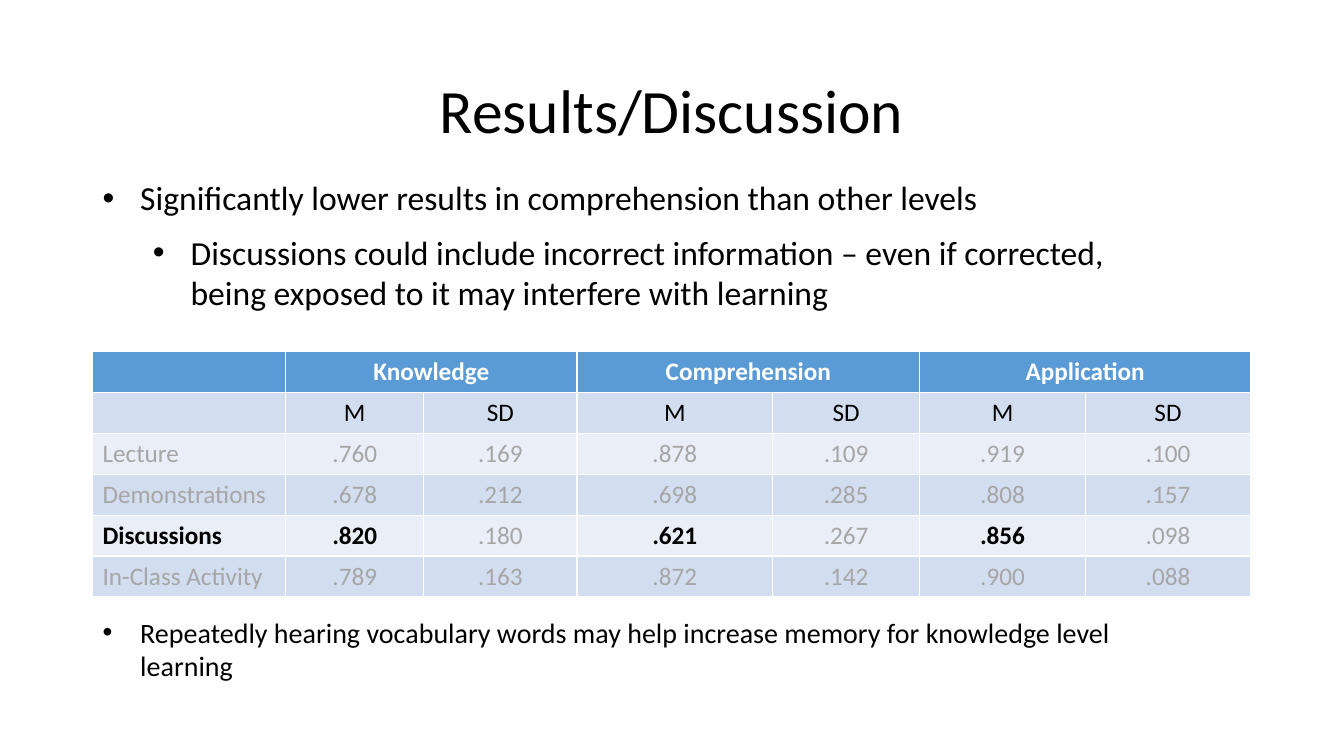
from dataclasses import dataclass

from lxml.etree import SubElement
from pptx import Presentation
from pptx.dml.color import RGBColor as Rgb
from pptx.enum.text import MSO_ANCHOR as Anchor
from pptx.enum.text import MSO_AUTO_SIZE as Auto
from pptx.enum.text import PP_ALIGN as Align
from pptx.oxml.ns import qn
from pptx.util import Cm, Pt


@dataclass(frozen=True)
class Theme:
    font: str = "Calibri"
    ink: str = "000000"
    dim: str = "A6A6A6"
    white: str = "FFFFFF"
    head: str = "5B9BD5"
    bands: tuple = ("EAEFF7", "D2DEEF")
    title: int = 44
    list: int = 24
    note: int = 20
    cell: int = 18


THEME = Theme()
LEFT = 2.33
WIDTHS = (4.87, 3.48, 3.86, 4.93, 3.71, 4.17, 4.17)
HIGH = 1.03
GROUPS = ("Knowledge", "Comprehension", "Application")
ROWS = (
    ("", "M", "SD", "M", "SD", "M", "SD"),
    ("Lecture", ".760", ".169", ".878", ".109", ".919", ".100"),
    ("Demonstrations", ".678", ".212", ".698", ".285", ".808", ".157"),
    ("Discussions", ".820", ".180", ".621", ".267", ".856", ".098"),
    ("In-Class Activity", ".789", ".163", ".872", ".142", ".900", ".088"),
)
STRONG = "Discussions"
MEANS = (1, 3, 5)
POINTS = (
    ("Significantly lower results in comprehension than other levels", 1, 0.95),
    ("Discussions could include incorrect information – even if corrected, "
     "being exposed to it may interfere with learning", 2, 2.22),
)
NOTES = (
    ("Repeatedly hearing vocabulary words may help increase memory "
     "for knowledge level learning", 0, 0.95),
)


def place(shape, left, top, width, height):
    shape.left, shape.top = Cm(left), Cm(top)
    shape.width, shape.height = Cm(width), Cm(height)


def style(para, size, color=THEME.ink, bold=False):
    font = para.font
    font.name = THEME.font
    font.size = Pt(size)
    font.bold = bold
    font.color.rgb = Rgb.from_string(color)


def add_bullet(para, indent):
    props = para._p.get_or_add_pPr()
    props.set("marL", str(Cm(indent)))
    props.set("indent", str(-Cm(0.95)))
    SubElement(props, qn("a:buFont"), typeface="Arial")
    SubElement(props, qn("a:buChar"), char="•")


def fill_title(shape, text):
    place(shape, LEFT, 1.01, 29.21, 3.68)
    frame = shape.text_frame
    frame.text = text
    frame.vertical_anchor = Anchor.MIDDLE
    para = frame.paragraphs[0]
    para.alignment = Align.CENTER
    para.line_spacing = 0.9
    style(para, THEME.title)


def fill_list(shape, items, box, size, gap):
    place(shape, *box)
    frame = shape.text_frame
    frame.text = "\n".join(text for text, _, _ in items)
    frame.word_wrap = True
    frame.auto_size = Auto.SHAPE_TO_FIT_TEXT
    for para, (_, level, indent) in zip(frame.paragraphs, items):
        para.level = level
        para.alignment = Align.LEFT
        para.line_spacing = 1.0
        para.space_before = Pt(gap)
        add_bullet(para, indent)
        style(para, size)


def fill_cell(cell, text, fill, color, bold, align):
    cell.fill.solid()
    cell.fill.fore_color.rgb = Rgb.from_string(fill)
    cell.text = text
    para = cell.text_frame.paragraphs[0]
    para.alignment = align
    style(para, THEME.cell, color, bold)


def add_grid(slide):
    count = len(ROWS) + 1
    frame = slide.shapes.add_table(
        count, len(WIDTHS), Cm(LEFT), Cm(8.86), Cm(sum(WIDTHS)), Cm(HIGH * count))
    table = frame.table
    for col, width in zip(table.columns, WIDTHS):
        col.width = Cm(width)
    for row in table.rows:
        row.height = Cm(HIGH)
    for col in range(len(WIDTHS)):
        text = GROUPS[col // 2] if col in MEANS else ""
        fill_cell(table.cell(0, col), text, THEME.head, THEME.white, True, Align.CENTER)
    for col in MEANS:
        table.cell(0, col).merge(table.cell(0, col + 1))
    for row, values in enumerate(ROWS, 1):
        for col, text in enumerate(values):
            bold = values[0] == STRONG and (col == 0 or col in MEANS)
            color = THEME.ink if bold or row == 1 else THEME.dim
            align = Align.CENTER if col else Align.LEFT
            fill_cell(table.cell(row, col), text, THEME.bands[row % 2], color, bold, align)


def main():
    deck = Presentation()
    deck.slide_width, deck.slide_height = Cm(33.87), Cm(19.05)
    slide = deck.slides.add_slide(deck.slide_layouts[3])
    title, points, notes = slide.placeholders
    fill_title(title, "Results/Discussion")
    fill_list(points, POINTS, (LEFT, 4.34, 26.62, 3.68), THEME.list, 10)
    add_grid(slide)
    fill_list(notes, NOTES, (LEFT, 15.37, 27.51, 1.96), THEME.note, 0)
    deck.save("out.pptx")


if __name__ == "__main__":
    main()
